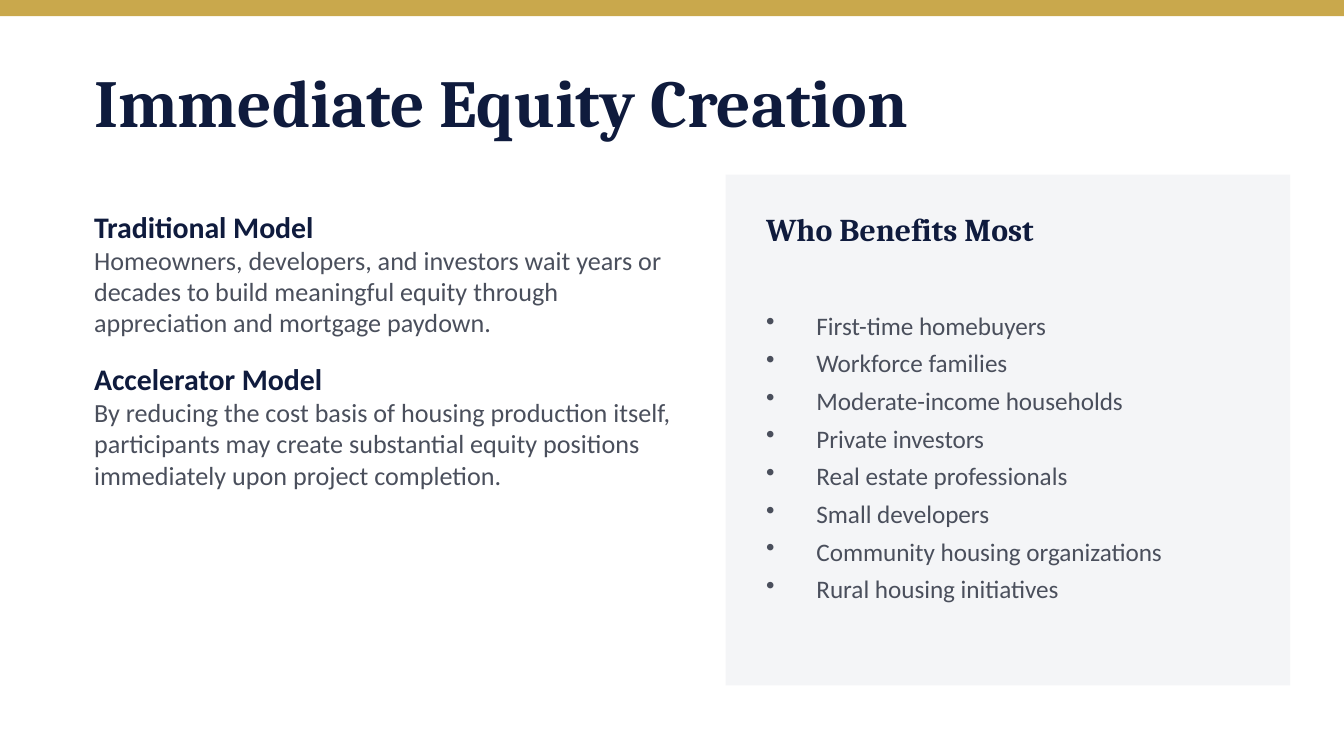
from lxml import etree
from pptx import Presentation
from pptx.dml.color import RGBColor
from pptx.enum import shapes, text
from pptx.oxml import ns
from pptx.util import Pt

COLORS = {
    "gold": "C9A84C",
    "navy": "0F1B3D",
    "gray": "4A4F5C",
    "pale": "F4F5F7",
}
HEAD = "Cambria"
BODY = "Calibri"
MODELS = [
    ("Traditional Model",
     "Homeowners, developers, and investors wait years or decades to build "
     "meaningful equity through appreciation and mortgage paydown."),
    ("Accelerator Model",
     "By reducing the cost basis of housing production itself, participants "
     "may create substantial equity positions immediately upon project "
     "completion."),
]
GROUPS = [
    "First-time homebuyers",
    "Workforce families",
    "Moderate-income households",
    "Private investors",
    "Real estate professionals",
    "Small developers",
    "Community housing organizations",
    "Rural housing initiatives",
]


def add_rect(slide, box, color):
    rect = slide.shapes.add_shape(
        shapes.MSO_SHAPE.RECTANGLE, *(Pt(v) for v in box))
    rect.shadow.inherit = False
    rect.fill.solid()
    rect.fill.fore_color.rgb = RGBColor.from_string(COLORS[color])
    rect.line.fill.background()


def add_frame(slide, box):
    """Add a wrapping text box without margins, centred vertically."""
    frame = slide.shapes.add_textbox(*(Pt(v) for v in box)).text_frame
    frame.word_wrap = True
    frame.vertical_anchor = text.MSO_ANCHOR.MIDDLE
    frame.margin_left = frame.margin_right = 0
    frame.margin_top = frame.margin_bottom = 0
    return frame


def add_para(frame, words, size, color, face=BODY, bold=False, after=0):
    """Fill the empty first paragraph, or append a new one."""
    para = frame.paragraphs[0]
    if para.runs:
        para = frame.add_paragraph()
    para.text = words
    para.space_after = Pt(after)
    font = para.runs[0].font
    font.name, font.size, font.bold = face, Pt(size), bold
    font.color.rgb = RGBColor.from_string(COLORS[color])
    return para


def add_bullet(para, indent):
    props = para._p.get_or_add_pPr()
    props.set("marL", str(Pt(indent)))
    props.set("indent", str(-Pt(indent)))
    etree.SubElement(props, ns.qn("a:buChar")).set("char", "•")


def add_title(slide, box, words, size):
    add_para(add_frame(slide, box), words, size, "navy", HEAD, True)


def add_models(slide, box):
    frame = add_frame(slide, box)
    for name, detail in MODELS:
        add_para(frame, name, 16, "navy", bold=True)
        last = name == MODELS[-1][0]
        add_para(frame, detail, 14, "gray", after=0 if last else 12)


def add_list(slide, box):
    frame = add_frame(slide, box)
    for group in GROUPS:
        add_bullet(add_para(frame, group, 13.5, "gray", after=4), 27)


def main():
    deck = Presentation()
    deck.slide_width, deck.slide_height = Pt(720), Pt(405)
    slide = deck.slides.add_slide(deck.slide_layouts[6])

    add_rect(slide, (0, 0, 720, 8.64), "gold")
    add_title(slide, (50.4, 28.8, 648, 50.4), "Immediate Equity Creation", 36)
    add_models(slide, (50.4, 93.6, 309.6, 187.2))

    add_rect(slide, (388.8, 93.6, 302.4, 273.6), "pale")
    add_title(slide, (410.4, 108, 252, 28.8), "Who Benefits Most", 17)
    add_list(slide, (410.4, 144, 259.2, 201.6))

    deck.save("out.pptx")


if __name__ == "__main__":
    main()
